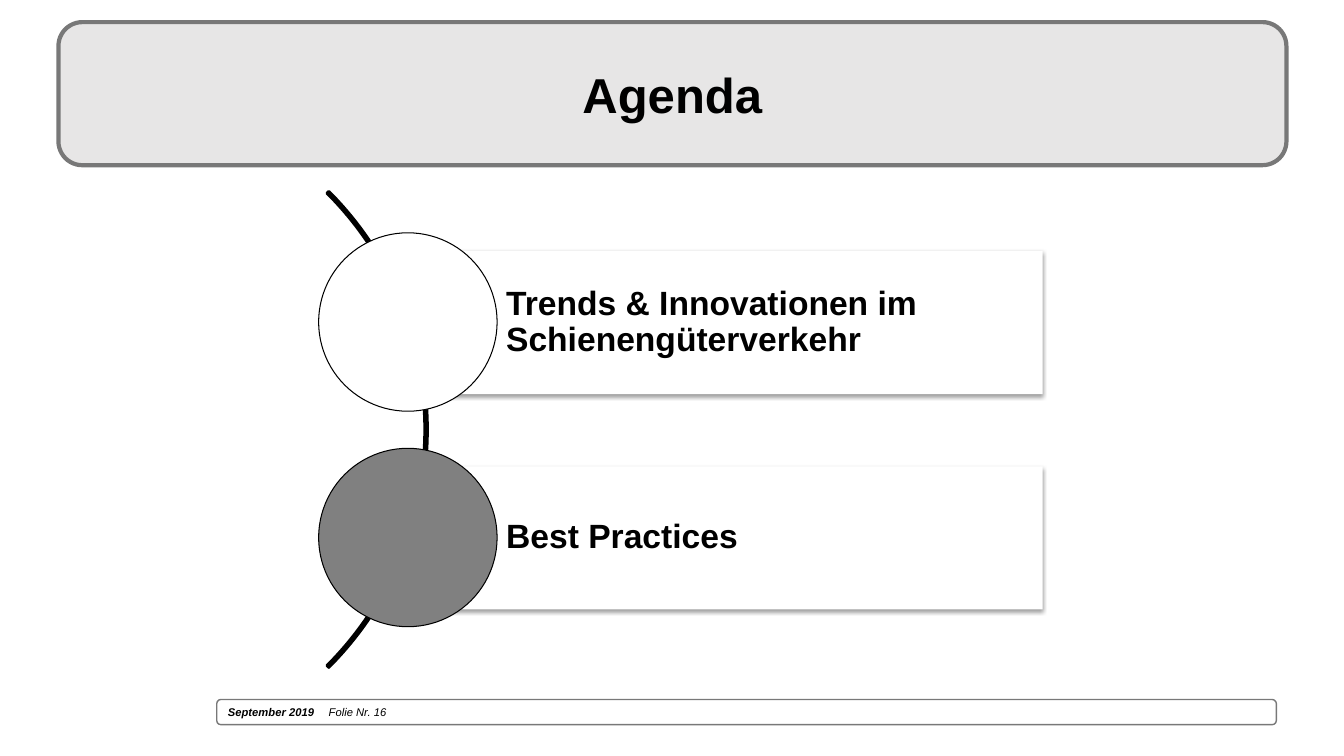
"""Build the agenda slide with a header band, an arc of topics and a footer."""
from dataclasses import dataclass

from lxml import etree
from pptx import Presentation
from pptx.dml.color import RGBColor
from pptx.enum.shapes import MSO_SHAPE
from pptx.enum.text import MSO_ANCHOR, PP_ALIGN
from pptx.oxml.ns import qn
from pptx.shapes.autoshape import Shape
from pptx.slide import Slide
from pptx.text.text import _Paragraph
from pptx.util import Emu, Inches, Pt

ROUND, RECT = MSO_SHAPE.ROUNDED_RECTANGLE, MSO_SHAPE.RECTANGLE
ARC, CIRCLE = MSO_SHAPE.BLOCK_ARC, MSO_SHAPE.OVAL
LEFT, CENTER, MIDDLE = PP_ALIGN.LEFT, PP_ALIGN.CENTER, MSO_ANCHOR.MIDDLE
WIDTH, HEIGHT = Inches(13.33), Inches(7.5)
BLACK, WHITE, GRAY, BORDER, BAND = "000000", "FFFFFF", "808080", "787878", "E7E6E6"
TOPIC_PITCH = 28.5


@dataclass(frozen=True)
class Box:
    """Place and size in percent of the slide's width and height."""
    left: float
    top: float
    width: float
    height: float

    def down(self, distance: float) -> "Box":
        """Return the same box moved down."""
        return Box(self.left, self.top + distance, self.width, self.height)


@dataclass(frozen=True)
class Topic:
    """One agenda entry and the fill of its circle."""
    text: str
    fill: str


HEADER = Box(4.35, 2.93, 91.37, 18.93)
FOOTER = Box(16.13, 92.53, 78.84, 3.33)
ARC_BOX = Box(-18.3, 12.27, 50.11, 89.07)
CARD = Box(29.26, 33.2, 48.31, 18.93)
DOT = Box(23.71, 30.8, 13.28, 23.6)
TOPICS = [
    Topic("Trends & Innovationen im Schienengüterverkehr", WHITE),
    Topic("Best Practices", GRAY),
]


def across(percent: float) -> Emu:
    """Convert a share of the slide's width to a length."""
    return Emu(round(WIDTH * percent / 100))


def down(percent: float) -> Emu:
    """Convert a share of the slide's height to a length."""
    return Emu(round(HEIGHT * percent / 100))


def color(value: str) -> RGBColor:
    """Convert a hex string to a colour."""
    return RGBColor.from_string(value)


def add_box(s: Slide, kind: MSO_SHAPE, box: Box, fill: str = "",
            line: str = "", weight: float = 0) -> Shape:
    """Draw a preset shape with optional fill and outline."""
    sp = s.shapes.add_shape(kind, across(box.left), down(box.top),
                            across(box.width), down(box.height))
    sp.shadow.inherit = False
    if fill:
        sp.fill.solid()
        sp.fill.fore_color.rgb = color(fill)
    else:
        sp.fill.background()
    if line:
        sp.line.color.rgb = color(line)
        sp.line.width = Pt(weight)
    else:
        sp.line.fill.background()
    return sp


def start_text(sp: Shape, align: PP_ALIGN) -> _Paragraph:
    """Prepare the shape's text frame and return its paragraph."""
    tf = sp.text_frame
    for name, value in {"word_wrap": True, "vertical_anchor": MIDDLE}.items():
        setattr(tf, name, value)
    p = tf.paragraphs[0]
    p.alignment = align
    return p


def add_run(p: _Paragraph, text: str, size: float, bold: bool = True,
            italic: bool = False) -> None:
    """Add black Arial text to a paragraph."""
    r = p.add_run()
    r.text = text
    font = {"name": "Arial", "size": Pt(size), "bold": bold, "italic": italic}
    for name, value in font.items():
        setattr(r.font, name, value)
    r.font.color.rgb = color(BLACK)


def add_shadow(sp: Shape) -> None:
    """Cast a soft shadow below a shape."""
    effects = sp._element.spPr.find(qn("a:effectLst"))
    shadow = etree.SubElement(effects, qn("a:outerShdw"), blurRad=str(Pt(3.1)),
                              dist=str(Pt(1.6)), dir="5400000", rotWithShape="0")
    tint = etree.SubElement(shadow, qn("a:srgbClr"), val=BLACK)
    etree.SubElement(tint, qn("a:alpha"), val="38000")


def add_footer(s: Slide) -> None:
    """Draw the footer with date and slide number."""
    p = start_text(add_box(s, ROUND, FOOTER, WHITE, BORDER, 1), LEFT)
    tabs = etree.SubElement(p._p.get_or_add_pPr(), qn("a:tabLst"))
    etree.SubElement(tabs, qn("a:tab"), pos=str(Inches(1)), algn="l")
    add_run(p, "September 2019\t", 8, italic=True)
    add_run(p, "Folie Nr. 16", 8, bold=False, italic=True)


def add_arc(s: Slide) -> None:
    """Draw the thin arc from -45 to 45 degrees."""
    sp = add_box(s, ARC, ARC_BOX, line=BLACK, weight=2)
    for i, value in enumerate((189, 27, 0.004)):
        sp.adjustments[i] = value


def add_topic(s: Slide, topic: Topic, offset: float) -> None:
    """Draw a topic card with its circle."""
    sp = add_box(s, RECT, CARD.down(offset), WHITE)
    add_shadow(sp)
    p = start_text(sp, LEFT)
    p.line_spacing = 0.9
    inset = across(0.53)
    margins = {"margin_left": across(8.4), "margin_right": inset,
               "margin_top": inset, "margin_bottom": inset}
    for name, value in margins.items():
        setattr(sp.text_frame, name, value)
    add_run(p, topic.text, 24)
    add_box(s, CIRCLE, DOT.down(offset), topic.fill, BLACK, 0.75)


def main() -> None:
    """Build and save the presentation."""
    prs = Presentation()
    prs.slide_width, prs.slide_height = WIDTH, HEIGHT
    s = prs.slides.add_slide(prs.slide_layouts[6])
    add_footer(s)
    header = add_box(s, ROUND, HEADER, BAND, BORDER, 3)
    add_run(start_text(header, CENTER), "Agenda", 35)
    add_arc(s)
    for i, topic in enumerate(TOPICS):
        add_topic(s, topic, i * TOPIC_PITCH)
    prs.save("out.pptx")


if __name__ == "__main__":
    main()
